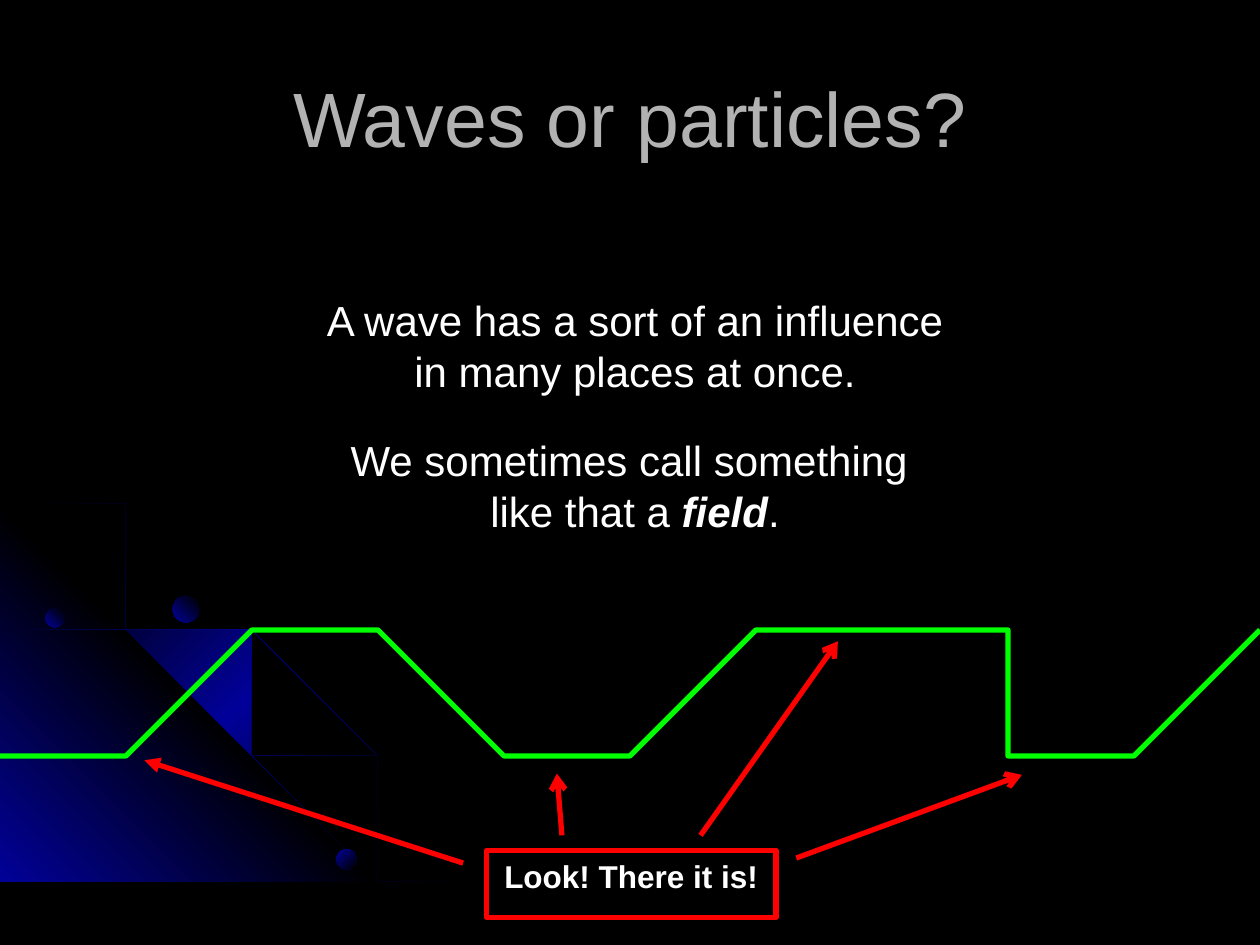
from dataclasses import dataclass

from pptx import Presentation
from pptx.dml.color import RGBColor
from pptx.enum.shapes import MSO_CONNECTOR, MSO_SHAPE
from pptx.enum.text import MSO_ANCHOR, PP_ALIGN
from pptx.oxml.ns import qn
from pptx.oxml.xmlchemy import OxmlElement
from pptx.util import Inches, Pt

BLACK, BLUE, WHITE = "000000", "010199", "FFFFFF"
GREEN, RED, GREY = "00FF00", "FF0000", "B2B2B2"
STEPS = 16  # line pieces per stretch of the wave

Point = tuple[float, float]


@dataclass
class Backdrop:
    outline: list[Point]
    colours: tuple[str, ...]
    angle: int


@dataclass
class Particle:
    left: float
    top: float
    size: float
    angle: int


@dataclass
class Pointer:
    start: Point
    end: Point


GLOW = (BLACK, BLUE, BLACK)
BACKDROPS = [
    Backdrop([(0.57, 4.47), (0.28, 4.41), (0, 4.35), (0, 4.38), (0.28, 4.43), (0.56, 4.49),
              (0.97, 4.61), (1.35, 4.78), (1.73, 4.99), (2.08, 5.23), (2.41, 5.49),
              (2.71, 5.79), (2.98, 6.12), (3.23, 6.49), (3.37, 6.73), (3.5, 6.98),
              (3.6, 7.23), (3.7, 7.49), (3.72, 7.49), (3.62, 7.23), (3.52, 6.98),
              (3.39, 6.73), (3.25, 6.48), (3, 6.11), (2.72, 5.78), (2.42, 5.48),
              (2.09, 5.21), (1.74, 4.97), (1.36, 4.77), (0.98, 4.59)], GLOW, 45),
    Backdrop([(3.22, 7.49), (0, 7.49), (0, 4.27)], (BLUE, BLACK, BLUE), 315),
    Backdrop([(2.85, 7.14), (2.94, 7.32), (3.01, 7.49), (3.03, 7.49), (2.96, 7.3),
              (2.86, 7.12), (2.66, 6.76), (2.42, 6.4), (2.15, 6.06), (1.84, 5.76),
              (1.52, 5.49), (1.17, 5.26), (0.79, 5.05), (0.41, 4.88), (0, 4.75),
              (0, 4.77), (0.39, 4.9), (0.77, 5.07), (1.15, 5.28), (1.5, 5.51),
              (1.83, 5.78), (2.13, 6.08), (2.4, 6.41), (2.65, 6.77)], GLOW, 45),
    Backdrop([(0, 4.42), (0, 4.44), (0.36, 4.57), (0.74, 4.75), (1.09, 4.94), (1.42, 5.18),
              (1.73, 5.44), (2.02, 5.75), (2.27, 6.05), (2.52, 6.41), (2.67, 6.67),
              (2.8, 6.94), (2.92, 7.22), (3.01, 7.49), (3.03, 7.49), (2.94, 7.2),
              (2.82, 6.93), (2.69, 6.65), (2.54, 6.39), (2.29, 6.03), (2.04, 5.73),
              (1.75, 5.43), (1.44, 5.16), (1.11, 4.93), (0.76, 4.73), (0.39, 4.55)], GLOW, 45),
]
PARTICLES = [
    Particle(0.36, 4.83, 0.15, 315),
    Particle(2.67, 6.74, 0.16, 45),
    Particle(1.37, 4.73, 0.21, 315),
]
WAVE_KNOTS = [(0, 5.95), (1, 5.95), (2, 4.95), (3, 4.95), (4, 5.95), (5.02, 5.95),
              (6, 4.97), (7.02, 4.97), (8.02, 5.95), (9, 5.95), (10, 4.95)]
POINTERS = [
    Pointer((6.32, 6.81), (8.11, 6.15)),
    Pointer((5.56, 6.63), (6.65, 5.09)),
    Pointer((4.46, 6.63), (4.42, 6.14)),
]


def rgb(colour: str) -> RGBColor:
    return RGBColor.from_string(colour)


def style_font(font, size: int, colour: str, bold: bool = False) -> None:
    font.name, font.size, font.bold = "Arial", Pt(size), bold
    font.color.rgb = rgb(colour)


def style_line(line, colour: str) -> None:
    line.color.rgb = rgb(colour)
    line.width = Pt(3)


def add_arrowhead(shape, kind: str) -> None:
    tail = OxmlElement("a:tailEnd")
    tail.set("type", kind)
    shape.line._get_or_add_ln().append(tail)


def fill_gradient(shape, colours: tuple[str, ...], angle: int) -> None:
    """Fill with evenly spaced colours; the angle runs clockwise."""
    shape.shadow.inherit = False
    shape.line.fill.background()
    shape.fill.gradient()
    shape.fill.gradient_angle = 360 - angle
    stops = shape.element.spPr.find(".//" + qn("a:gsLst"))
    for stop in list(stops):
        stops.remove(stop)
    for index, colour in enumerate(colours):
        stop = OxmlElement("a:gs")
        stop.set("pos", str(100000 * index // (len(colours) - 1)))
        value = OxmlElement("a:srgbClr")
        value.set("val", colour)
        stop.append(value)
        stops.append(stop)


def add_outline(slide, points: list[Point], close: bool):
    builder = slide.shapes.build_freeform(*points[0], scale=Inches(1))
    builder.add_line_segments(points[1:], close=close)
    return builder.convert_to_shape()


def wave_points(knots: list[Point]) -> list[Point]:
    """Smooth curve through the knots, each stretch a cubic Bezier."""
    def handle(index: int, sign: int) -> Point:
        before, knot, after = knots[index - 1:index + 2]
        return tuple(k + sign * (a - b) / 6 for b, k, a in zip(before, knot, after))

    def midpoint(first: Point, second: Point) -> Point:
        return tuple((a + b) / 2 for a, b in zip(first, second))

    points, last = [knots[0]], len(knots) - 1
    for i in range(last):
        start, end = knots[i], knots[i + 1]
        leave = handle(i, 1) if i else midpoint(start, handle(1, -1))
        arrive = handle(i + 1, -1) if i + 1 < last else midpoint(leave, end)
        for step in range(1, STEPS + 1):
            t = step / STEPS
            u = 1 - t
            points.append(tuple(u**3 * a + 3 * u * u * t * b + 3 * u * t * t * c + t**3 * d
                                for a, b, c, d in zip(start, leave, arrive, end)))
    return points


def add_statement(slide, left: float, top: float, width: float, text: str):
    box = slide.shapes.add_textbox(Inches(left), Inches(top), Inches(width), Inches(0.91))
    box.text_frame.word_wrap = False
    paragraph = box.text_frame.paragraphs[0]
    paragraph.text = text
    paragraph.alignment = PP_ALIGN.CENTER
    for run in paragraph.runs:
        style_font(run.font, 24, WHITE)
    return paragraph


def add_pointer(slide, pointer: Pointer) -> None:
    ends = [Inches(value) for value in pointer.start + pointer.end]
    arrow = slide.shapes.add_connector(MSO_CONNECTOR.STRAIGHT, *ends)
    style_line(arrow.line, RED)
    add_arrowhead(arrow, "arrow")
    arrow.element.spPr.append(OxmlElement("a:effectLst"))


def main() -> None:
    presentation = Presentation()
    presentation.slide_width, presentation.slide_height = Inches(10), Inches(7.5)
    slide = presentation.slides.add_slide(presentation.slide_layouts[5])
    slide.background.fill.solid()
    slide.background.fill.fore_color.rgb = rgb(BLACK)

    # Corner glow, orbits and particles
    for backdrop in BACKDROPS:
        fill_gradient(add_outline(slide, backdrop.outline, True), backdrop.colours, backdrop.angle)
    for particle in PARTICLES:
        size = Inches(particle.size)
        ball = slide.shapes.add_shape(MSO_SHAPE.OVAL, Inches(particle.left),
                                      Inches(particle.top), size, size)
        fill_gradient(ball, (BLUE, BLACK), particle.angle)

    # Title
    title = slide.shapes.title
    title.left, title.top, title.width, title.height = map(Inches, (0.5, 0.3, 9, 1.25))
    title.text_frame.text = "Waves or particles?"
    title.text_frame.vertical_anchor = MSO_ANCHOR.MIDDLE
    heading = title.text_frame.paragraphs[0]
    heading.alignment = PP_ALIGN.CENTER
    style_font(heading.runs[0].font, 44, GREY)

    # Statements
    add_statement(slide, 2.47, 2.29, 5.14,
                  "A wave has a sort of an influence\nin many places at once.")
    definition = add_statement(slide, 2.66, 3.4, 4.76,
                               "We sometimes call something \nlike that a ")
    for text, is_term in (("field", True), (".", False)):
        run = definition.add_run()
        run.text = text
        style_font(run.font, 24, WHITE, is_term)
        run.font.italic = is_term

    # Wave
    wave = add_outline(slide, wave_points(WAVE_KNOTS), False)
    wave.shadow.inherit = False
    wave.fill.background()
    style_line(wave.line, GREEN)

    # Callout and its extra pointers
    callout = slide.shapes.add_shape(MSO_SHAPE.LINE_CALLOUT_1, Inches(3.86), Inches(6.75),
                                     Inches(2.3), Inches(0.53))
    for index, value in enumerate((0.19, -0.08, -1.35, -1.18)):
        callout.adjustments[index] = value
    callout.shadow.inherit = False
    callout.fill.background()
    style_line(callout.line, RED)
    add_arrowhead(callout, "triangle")
    callout.text_frame.text = "Look! There it is!"
    callout.text_frame.vertical_anchor = MSO_ANCHOR.TOP
    label = callout.text_frame.paragraphs[0]
    label.alignment = PP_ALIGN.CENTER
    style_font(label.runs[0].font, 18, WHITE, True)
    for pointer in POINTERS:
        add_pointer(slide, pointer)

    presentation.save("out.pptx")


if __name__ == "__main__":
    main()
